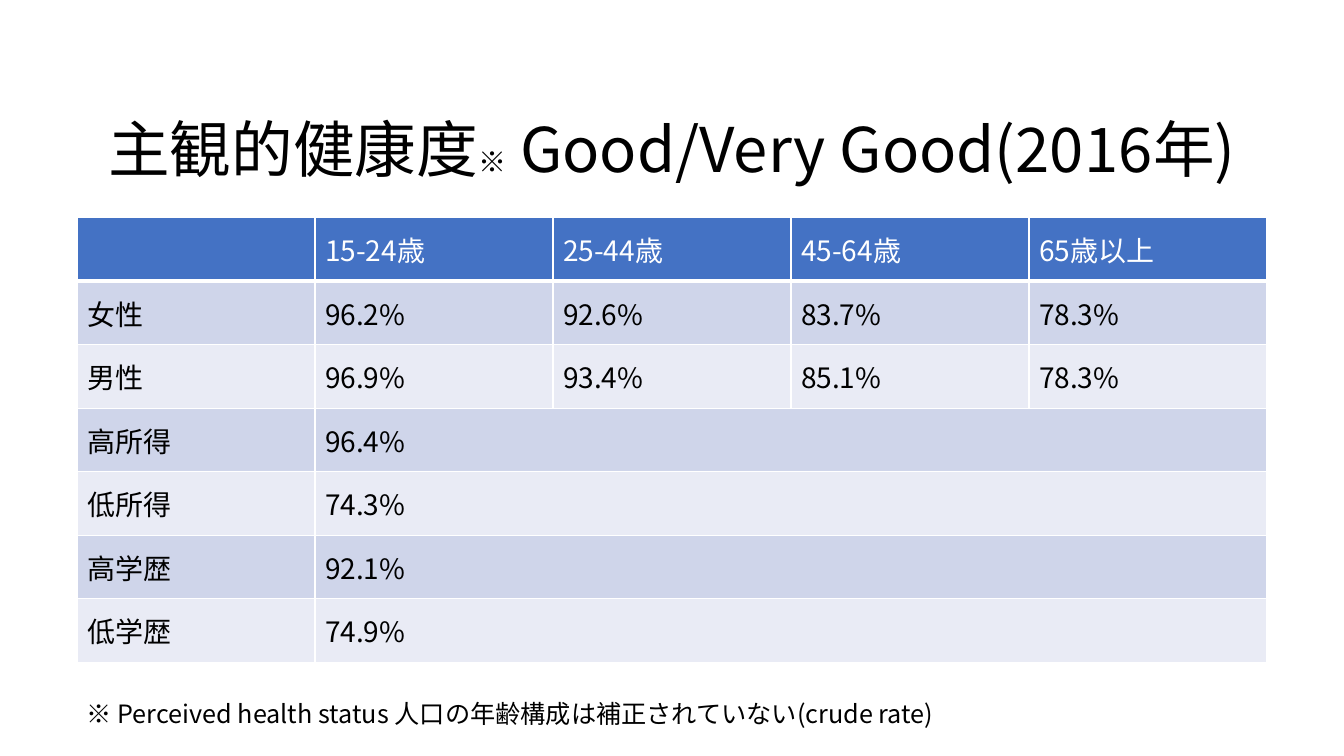
from lxml import etree
from pptx import Presentation
from pptx.dml.color import RGBColor
from pptx.enum.text import MSO_ANCHOR, MSO_AUTO_SIZE, PP_ALIGN
from pptx.oxml.ns import qn
from pptx.util import Pt

BOTTOM, MIDDLE = MSO_ANCHOR.BOTTOM, MSO_ANCHOR.MIDDLE
CENTER, LEFT = PP_ALIGN.CENTER, PP_ALIGN.LEFT
NO_FIT = MSO_AUTO_SIZE.NONE

FONT = "Noto Sans CJK JP"
COLORS = {"text": "000000", "white": "FFFFFF", "header": "4472C4",
          "band_dark": "CFD5EA", "band_light": "E9EBF5"}

TITLE = [("主観的健康度", 44), ("※", 20), (" Good/Very Good(2016年)", 44)]
ROWS = [
    ["", "15-24歳", "25-44歳", "45-64歳", "65歳以上"],
    ["女性", "96.2%", "92.6%", "83.7%", "78.3%"],
    ["男性", "96.9%", "93.4%", "85.1%", "78.3%"],
    ["高所得", "96.4%"],
    ["低所得", "74.3%"],
    ["高学歴", "92.1%"],
    ["低学歴", "74.9%"],
]
FOOTNOTE = "※ Perceived health status 人口の年齢構成は補正されていない(crude rate)"


def add_run(p, text, size=20, color="text"):
    r = p.add_run()
    r.text = text
    r.font.size = Pt(size)
    r.font.bold = False
    r.font.name = FONT
    r.font.color.rgb = RGBColor.from_string(COLORS[color])
    ea = etree.SubElement(r.font._element, qn("a:ea"))
    ea.set("typeface", FONT)


def set_borders(cell, bottom=1):
    """Draw white lines round a cell; bottom is the lower line's width in points."""
    tc_pr = cell._tc.get_or_add_tcPr()
    widths = {"L": 1, "R": 1, "T": 1, "B": bottom}
    for i, (side, width) in enumerate(widths.items()):
        ln = etree.Element(qn(f"a:ln{side}"), w=str(Pt(width)))
        fill = etree.SubElement(ln, qn("a:solidFill"))
        etree.SubElement(fill, qn("a:srgbClr"), val=COLORS["white"])
        tc_pr.insert(i, ln)


def add_title(s, x, y, w, h):
    title = s.shapes.title
    title.left, title.top, title.width, title.height = Pt(x), Pt(y), Pt(w), Pt(h)
    tf = title.text_frame
    tf.word_wrap = True
    tf.auto_size = NO_FIT
    tf.vertical_anchor = BOTTOM
    p = tf.paragraphs[0]
    p.alignment = CENTER
    p.line_spacing = 0.9
    for text, size in TITLE:
        add_run(p, text, size=size)


def add_health_table(s, x, y, w, h):
    n_cols = len(ROWS[0])
    table = s.shapes.add_table(len(ROWS), n_cols, Pt(x), Pt(y), Pt(w), Pt(h)).table
    for col in table.columns:
        col.width = Pt(w / n_cols)
    for i, values in enumerate(ROWS):
        table.rows[i].height = Pt(h / len(ROWS))
        is_header = i == 0
        band = "header" if is_header else "band_dark" if i % 2 else "band_light"
        for cell in table.rows[i].cells:
            cell.fill.solid()
            cell.fill.fore_color.rgb = RGBColor.from_string(COLORS[band])
            cell.vertical_anchor = MIDDLE
            set_borders(cell, bottom=3 if is_header else 1)
        for j, value in enumerate(values):
            if value:
                add_run(table.cell(i, j).text_frame.paragraphs[0], value,
                        color="white" if is_header else "text")
        if len(values) < n_cols:
            table.cell(i, len(values) - 1).merge(table.cell(i, n_cols - 1))


def add_footnote(s, x, y, w, h):
    tf = s.shapes.add_textbox(Pt(x), Pt(y), Pt(w), Pt(h)).text_frame
    tf.word_wrap = True
    p = tf.paragraphs[0]
    p.alignment = LEFT
    add_run(p, FOOTNOTE, size=18)


def main():
    prs = Presentation()
    prs.slide_width, prs.slide_height = Pt(960), Pt(540)
    s = prs.slides.add_slide(prs.slide_layouts[5])
    left, width = 55, 850
    add_title(s, left, 67, width, 69)
    add_health_table(s, left, 155.5, width, 317.5)
    add_footnote(s, left, 495.5, width, 29)
    prs.save("out.pptx")


if __name__ == "__main__":
    main()
